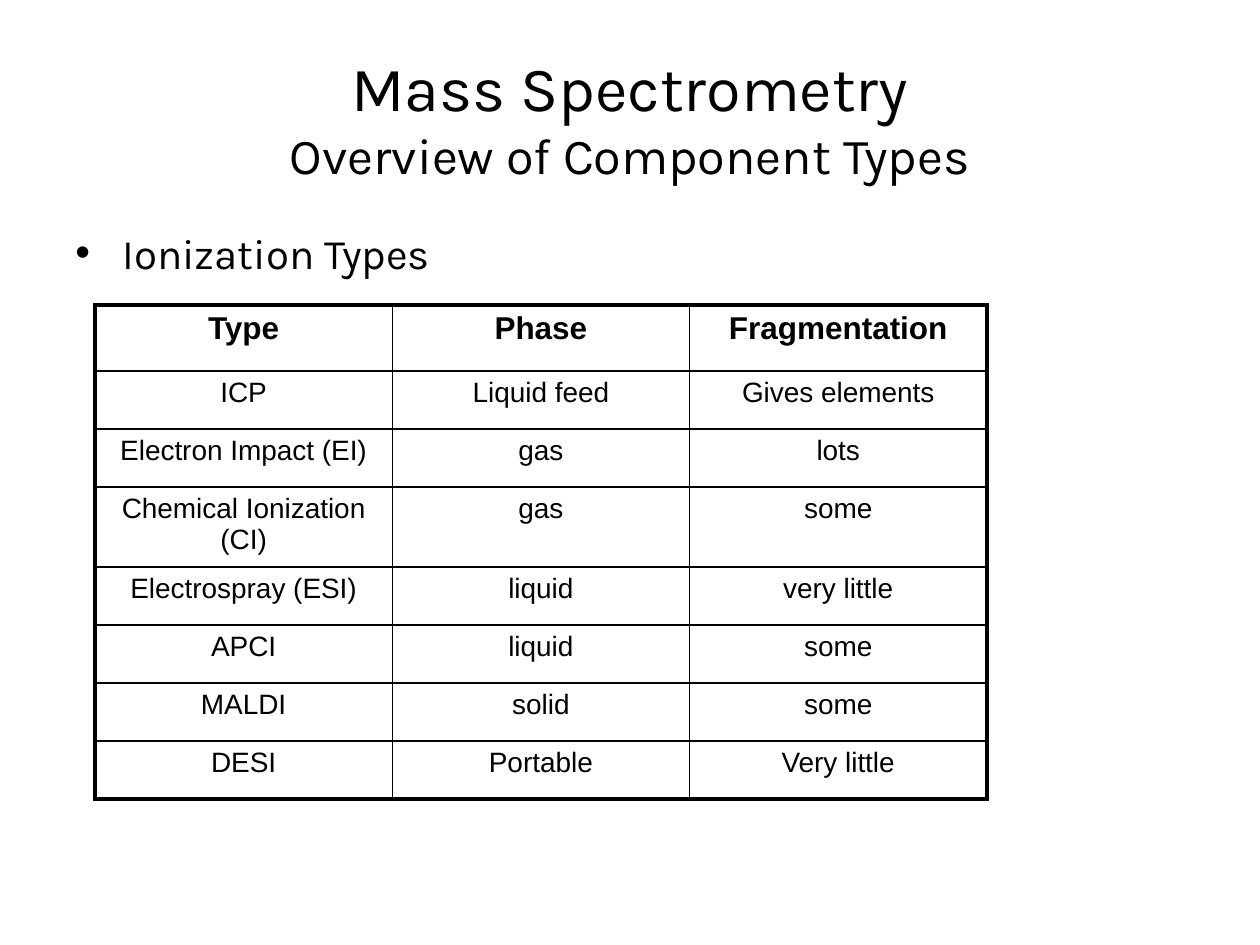
from lxml.etree import SubElement
from pptx import Presentation
from pptx.dml.color import RGBColor
from pptx.enum.text import MSO_ANCHOR, MSO_AUTO_SIZE, PP_ALIGN
from pptx.oxml.ns import qn
from pptx.util import Emu, Pt

SCALE = 914400 / 126
COLORS = {"ink": "000000", "paper": "FFFFFF"}
HEAD, BODY = "Karla", "Arial"
THICK, THIN = 2.25, 1
ROWS = [
    ("Type", "Phase", "Fragmentation"),
    ("ICP", "Liquid feed", "Gives elements"),
    ("Electron Impact (EI)", "gas", "lots"),
    ("Chemical Ionization (CI)", "gas", "some"),
    ("Electrospray (ESI)", "liquid", "very little"),
    ("APCI", "liquid", "some"),
    ("MALDI", "solid", "some"),
    ("DESI", "Portable", "Very little"),
]


def px(n):
    return Emu(round(n * SCALE))


def place(shape, box):
    shape.left, shape.top, shape.width, shape.height = map(px, box)


def add_run(para, text, size, font, bold=False):
    run = para.add_run()
    run.text = text
    run.font.size, run.font.name, run.font.bold = Pt(size), font, bold
    run.font.color.rgb = RGBColor.from_string(COLORS["ink"])


def space(para):
    """Space before a paragraph, as a share of its line."""
    gap = SubElement(para._p.get_or_add_pPr(), qn("a:spcBef"))
    SubElement(gap, qn("a:spcPct"), val="20000")


def add_title(slide, box):
    title = slide.shapes.title
    place(title, box)
    frame = title.text_frame
    frame.word_wrap, frame.auto_size = True, MSO_AUTO_SIZE.NONE
    frame.vertical_anchor = MSO_ANCHOR.MIDDLE
    para = frame.paragraphs[0]
    para.alignment = PP_ALIGN.CENTER
    add_run(para, "Mass Spectrometry", 36, HEAD)
    para.add_line_break()
    add_run(para, "Overview of Component Types", 28.8, HEAD)


def add_bullet(slide, box, text):
    frame = slide.shapes.add_textbox(*map(px, box)).text_frame
    frame.word_wrap = True
    para = frame.paragraphs[0]
    space(para)
    props = para._p.get_or_add_pPr()
    props.set("marL", str(px(47)))
    props.set("indent", str(-px(47)))
    SubElement(props, qn("a:buFont"), typeface=BODY)
    SubElement(props, qn("a:buChar"), char="•")
    add_run(para, text, 24, HEAD)


def set_edges(cell, edges):
    props = cell._tc.get_or_add_tcPr()
    for spot, (side, width) in enumerate(edges.items()):
        line = props.makeelement(qn(f"a:ln{side}"), {"w": str(Pt(width))})
        fill = SubElement(line, qn("a:solidFill"))
        SubElement(fill, qn("a:srgbClr"), val=COLORS["ink"])
        props.insert(spot, line)  # borders come before the fill


def add_grid(slide, box, tall):
    rows, cols = len(ROWS), len(ROWS[0])
    table = slide.shapes.add_table(rows, cols, *map(px, box)).table
    for col in table.columns:
        col.width = px(box[2] / cols)
    for row, height in zip(table.rows, tall):
        row.height = px(height)
    for r, texts in enumerate(ROWS):
        for c, text in enumerate(texts):
            cell = table.cell(r, c)
            cell.fill.solid()
            cell.fill.fore_color.rgb = RGBColor.from_string(COLORS["paper"])
            para = cell.text_frame.paragraphs[0]
            para.alignment = PP_ALIGN.CENTER
            space(para)
            add_run(para, text, 16 if r else 18, BODY, r == 0)
            # Thick outer frame, thin inner lines
            set_edges(cell, {
                "L": THIN if c else THICK,
                "R": THICK if c == cols - 1 else THIN,
                "T": THIN if r else THICK,
                "B": THICK if r == rows - 1 else THIN,
            })


def main():
    deck = Presentation()
    deck.slide_width, deck.slide_height = px(1260), px(945)
    slide = deck.slides.add_slide(deck.slide_layouts[5])
    add_title(slide, (63, 38, 1134, 158))
    add_bullet(slide, (63, 221, 1134, 624), "Ionization Types")
    tall = [66, 58, 58, 80, 58, 58, 58, 58]
    add_grid(slide, (95, 305, 892, sum(tall)), tall)
    deck.save("out.pptx")


if __name__ == "__main__":
    main()
